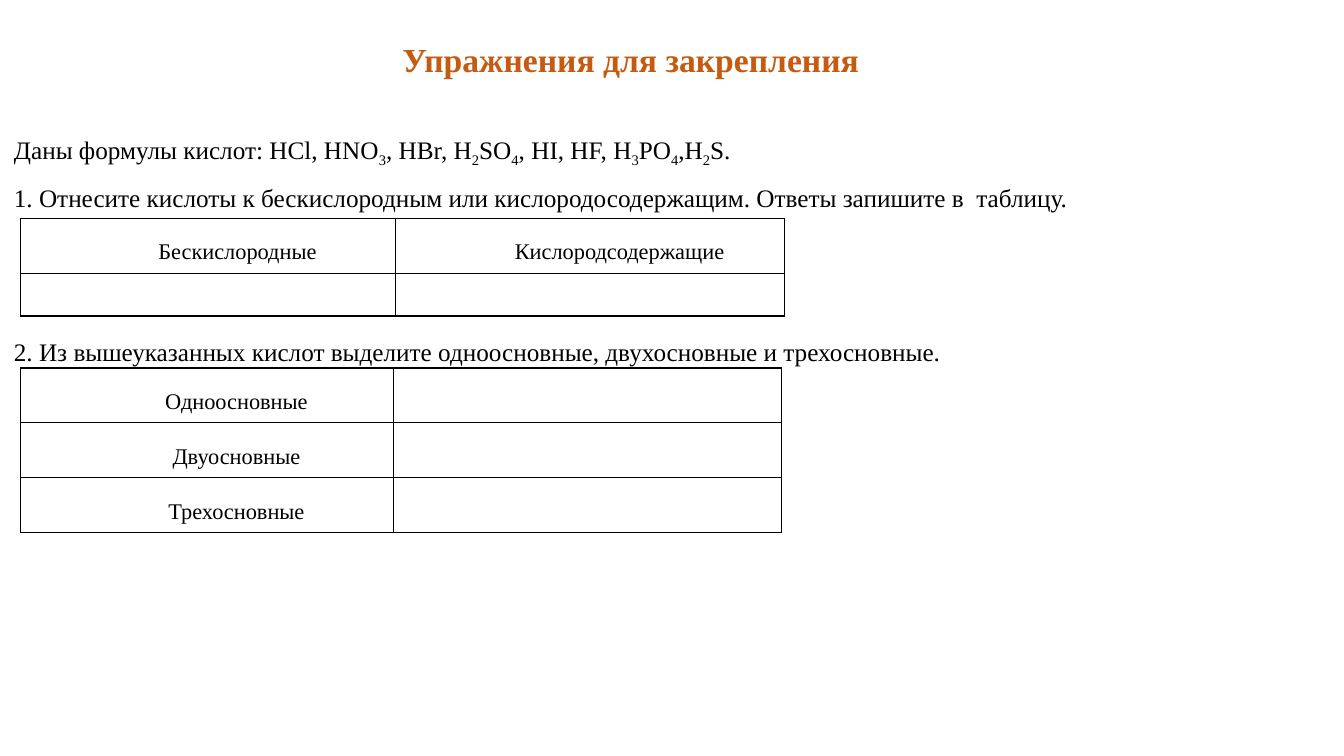
from dataclasses import dataclass

from lxml import etree
from pptx import Presentation
from pptx import util as u
from pptx.dml.color import RGBColor
from pptx.enum import text
from pptx.oxml import ns

FONT = "Times New Roman"
BLACK = RGBColor(0x00, 0x00, 0x00)
ORANGE = RGBColor(0xC5, 0x5A, 0x11)
SLIDE_W, SLIDE_H = u.Inches(13.33), u.Inches(7.5)
SUBSCRIPT_MARK = "|"


@dataclass(frozen=True)
class Line:
    top: float
    width: float
    content: str


@dataclass(frozen=True)
class Grid:
    top: float
    cols: tuple[float, ...]
    rows: tuple[float, ...]
    cells: tuple[tuple[str, ...], ...]


LINE_LEFT, LINE_HEIGHT = -4.13, 6.8
TABLE_LEFT, ROW_HEIGHT = 1.5, 7.27

LINES = (
    Line(14.8, 60.32, "Даны формулы кислот: HCl, HNO|3|, HBr, H|2|SO|4|, HI, HF, H|3|PO|4|,H|2|S."),
    Line(21.47, 90.47, "1. Отнесите кислоты к бескислородным или кислородосодержащим. "
                       "Ответы запишите в  таблицу."),
    Line(41.87, 76.52, "2. Из вышеуказанных кислот выделите одноосновные, двухосновные и трехосновные."),
)
GRIDS = (
    Grid(28.93, (27.91, 28.96), (ROW_HEIGHT, 5.6),
         (("Бескислородные", "Кислородсодержащие"), ("", ""))),
    Grid(48.67, (27.76, 28.88), (ROW_HEIGHT,) * 3,
         (("Одноосновные", ""), ("Двуосновные", ""), ("Трехосновные", ""))),
)


def across(percent: float) -> int:
    return round(SLIDE_W * percent / 100)


def down(percent: float) -> int:
    return round(SLIDE_H * percent / 100)


def format_paragraph(p, size: float, color: RGBColor = BLACK, bold: bool = False,
                     align=text.PP_ALIGN.LEFT) -> None:
    p.alignment = align
    p.line_spacing = 1.5
    p.space_before = u.Pt(0)
    pPr = p._p.get_or_add_pPr()
    pPr.set("marL", "0")
    pPr.set("indent", str(u.Inches(0.59)))
    for r in p.runs:
        r.font.name = FONT
        r.font.size = u.Pt(size)
        r.font.bold = bold
        r.font.color.rgb = color


def fit_frame(tf, wrap: bool) -> None:
    tf.word_wrap = wrap
    tf.auto_size = text.MSO_AUTO_SIZE.SHAPE_TO_FIT_TEXT
    tf.vertical_anchor = text.MSO_ANCHOR.TOP


def draw_title(s, content: str) -> None:
    sp = s.shapes.title
    sp.left, sp.top = across(24.53), down(1.87)
    sp.width, sp.height = across(40.36), down(8.53)
    tf = sp.text_frame
    tf.text = content
    fit_frame(tf, False)
    format_paragraph(tf.paragraphs[0], 24, ORANGE, True, text.PP_ALIGN.CENTER)


def draw_line(s, line: Line) -> None:
    sp = s.shapes.add_textbox(across(LINE_LEFT), down(line.top),
                              across(line.width), down(LINE_HEIGHT))
    tf = sp.text_frame
    fit_frame(tf, True)
    p = tf.paragraphs[0]
    for i, part in enumerate(line.content.split(SUBSCRIPT_MARK)):
        r = p.add_run()
        r.text = part
        if i % 2:
            r._r.get_or_add_rPr().set("baseline", "-25000")
    format_paragraph(p, 18)


def add_borders(cell) -> None:
    tcPr = cell._tc.get_or_add_tcPr()
    for side in ("L", "R", "T", "B"):
        ln = etree.SubElement(tcPr, ns.qn(f"a:ln{side}"), w=str(u.Pt(1)))
        fill = etree.SubElement(ln, ns.qn("a:solidFill"))
        etree.SubElement(fill, ns.qn("a:srgbClr"), val=str(BLACK))


def draw_grid(s, grid: Grid) -> None:
    frame = s.shapes.add_table(len(grid.rows), len(grid.cols), across(TABLE_LEFT), down(grid.top),
                               across(sum(grid.cols)), down(sum(grid.rows)))
    table = frame.table
    table.first_row = table.horz_banding = False
    for col, width in zip(table.columns, grid.cols):
        col.width = across(width)
    for row, height, labels in zip(table.rows, grid.rows, grid.cells):
        row.height = down(height)
        for cell, label in zip(row.cells, labels):
            add_borders(cell)
            cell.fill.background()
            if label:
                cell.text_frame.text = label
                cell.vertical_anchor = text.MSO_ANCHOR.MIDDLE
                cell.margin_left = cell.margin_right = u.Inches(0.07)
                cell.margin_top = cell.margin_bottom = u.Inches(0.07)
                format_paragraph(cell.text_frame.paragraphs[0], 16, align=text.PP_ALIGN.CENTER)


def main() -> None:
    prs = Presentation()
    prs.slide_width, prs.slide_height = SLIDE_W, SLIDE_H
    s = prs.slides.add_slide(prs.slide_layouts[5])
    draw_title(s, "Упражнения для закрепления")
    for line in LINES:
        draw_line(s, line)
    for grid in GRIDS:
        draw_grid(s, grid)
    prs.save("out.pptx")


if __name__ == "__main__":
    main()
